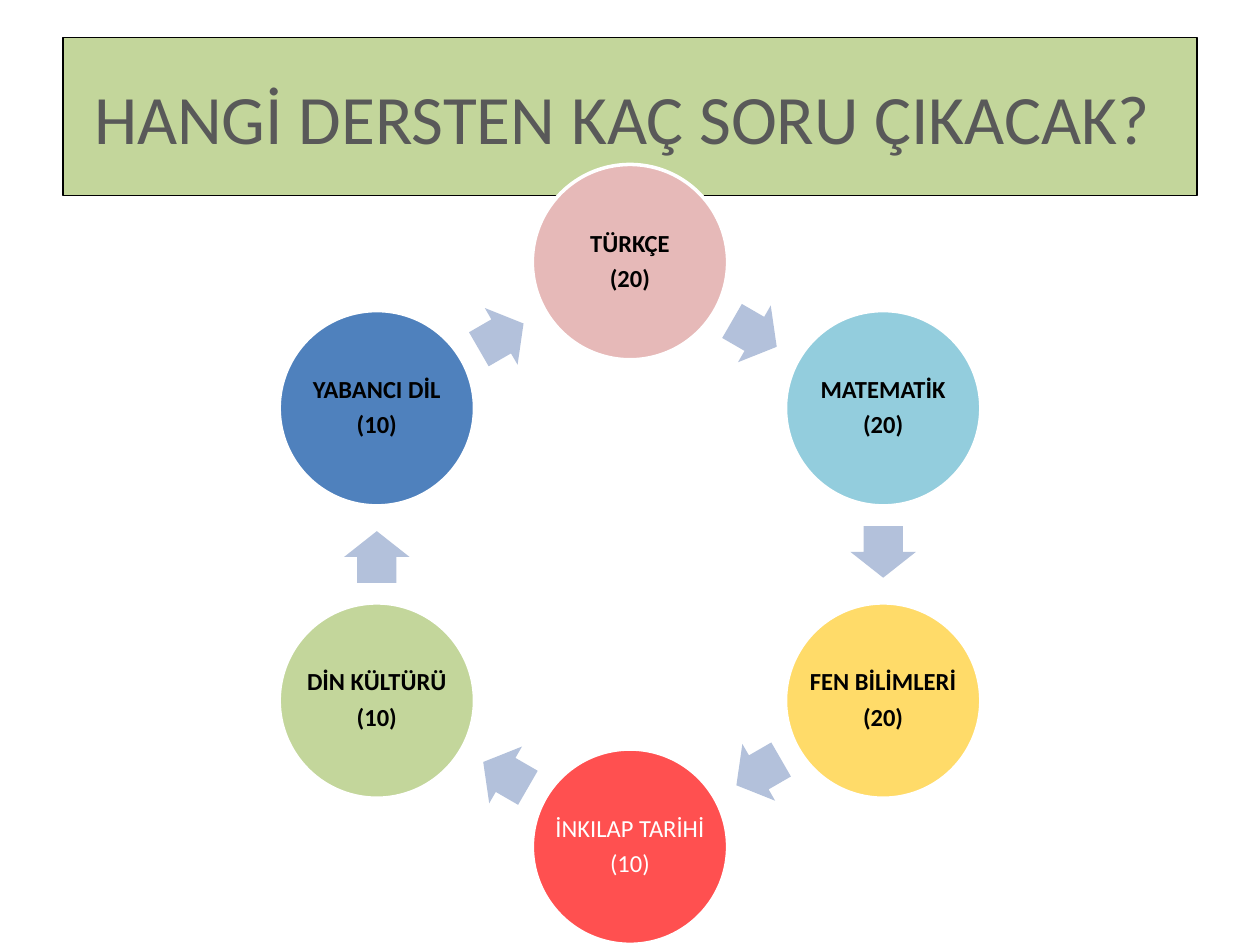
from dataclasses import dataclass
from math import cos, radians, sin

from pptx import Presentation
from pptx.dml.color import RGBColor
from pptx.enum.shapes import MSO_SHAPE
from pptx.enum.text import MSO_ANCHOR, MSO_AUTO_SIZE, PP_ALIGN
from pptx.util import Inches, Pt

ELLIPSE = MSO_SHAPE.OVAL
ARROW = MSO_SHAPE.RIGHT_ARROW
MIDDLE = MSO_ANCHOR.MIDDLE
CENTER = PP_ALIGN.CENTER
NO_AUTOFIT = MSO_AUTO_SIZE.NONE
TITLE_ONLY = 5


@dataclass(frozen=True)
class Theme:
    """Colours, font and type sizes of the slide."""
    font: str = "Calibri"
    title_size: float = 39.6
    label_size: float = 14
    title_text: str = "595959"
    title_fill: str = "C3D69B"
    black: str = "000000"
    white: str = "FFFFFF"
    arrow: str = "B3C1DB"


THEME = Theme()
CENTER_X, CENTER_Y, RADIUS = 5.0, 4.4, 2.32
DIAMETER = 1.55
ARROW_LENGTH, ARROW_WIDTH, ARROW_SETBACK = 0.41, 0.52, 0.02
SUBJECTS = [
    ("TÜRKÇE", 20, "E6B9B8", THEME.black, True),
    ("MATEMATİK", 20, "93CDDD", THEME.black, True),
    ("FEN BİLİMLERİ", 20, "FFDB69", THEME.black, True),
    ("İNKILAP TARİHİ", 10, "FF5050", THEME.white, False),
    ("DİN KÜLTÜRÜ", 10, "C3D69B", THEME.black, True),
    ("YABANCI DİL", 10, "4F81BD", THEME.black, True),
]


def paint(shape, fill, line=None, width=0):
    """Give a shape a solid fill and an optional outline."""
    shape.fill.solid()
    shape.fill.fore_color.rgb = RGBColor.from_string(fill)
    if line is None:
        shape.line.fill.background()
    else:
        shape.line.color.rgb = RGBColor.from_string(line)
        shape.line.width = Pt(width)


def style_text(paragraph, size, color, bold=False):
    """Centre a paragraph and format its runs."""
    paragraph.alignment = CENTER
    for run in paragraph.runs:
        run.font.name = THEME.font
        run.font.size = Pt(size)
        run.font.bold = bold
        run.font.color.rgb = RGBColor.from_string(color)


def add_centered_shape(slide, kind, x, y, width, height):
    """Add a shadowless preset shape around a centre point."""
    shape = slide.shapes.add_shape(
        kind, Inches(x - width / 2), Inches(y - height / 2),
        Inches(width), Inches(height))
    shape.shadow.inherit = False
    return shape


def set_title(slide, text):
    """Fill and format the title placeholder."""
    title = slide.shapes.title
    title.left, title.top = Inches(0.5), Inches(0.3)
    title.width, title.height = Inches(9), Inches(1.25)
    paint(title, THEME.title_fill, THEME.black, 0.75)
    frame = title.text_frame
    frame.text = text
    frame.auto_size = NO_AUTOFIT
    frame.vertical_anchor = MIDDLE
    style_text(frame.paragraphs[0], THEME.title_size, THEME.title_text)


def add_subject(slide, angle, name, count, fill, color, bold):
    """Add a subject circle at an angle on the ring."""
    x = CENTER_X + RADIUS * cos(radians(angle))
    y = CENTER_Y + RADIUS * sin(radians(angle))
    circle = add_centered_shape(slide, ELLIPSE, x, y, DIAMETER, DIAMETER)
    paint(circle, fill, THEME.white, 2)
    frame = circle.text_frame
    frame.text = f"{name}\n({count})"
    frame.word_wrap = False
    frame.vertical_anchor = MIDDLE
    frame.margin_left = frame.margin_right = Inches(0.02)
    frame.margin_top = frame.margin_bottom = Inches(0.02)
    for paragraph in frame.paragraphs:
        paragraph.line_spacing = 0.9
        paragraph.space_after = Pt(0.35 * THEME.label_size)
        style_text(paragraph, THEME.label_size, color, bold)


def add_ring_arrow(slide, angle, step):
    """Add a clockwise arrow midway between two neighbouring circles."""
    distance = RADIUS * cos(radians(step / 2))
    middle = radians(angle + step / 2)
    x = CENTER_X + distance * cos(middle) + ARROW_SETBACK * sin(middle)
    y = CENTER_Y + distance * sin(middle) - ARROW_SETBACK * cos(middle)
    arrow = add_centered_shape(slide, ARROW, x, y, ARROW_LENGTH, ARROW_WIDTH)
    arrow.adjustments[0] = 0.6
    arrow.adjustments[1] = 0.5
    arrow.rotation = (angle + step / 2 + 90) % 360
    paint(arrow, THEME.arrow)


def main():
    """Build the slide and save it."""
    presentation = Presentation()
    presentation.slide_width = Inches(10)
    presentation.slide_height = Inches(7.5)
    slide = presentation.slides.add_slide(presentation.slide_layouts[TITLE_ONLY])
    set_title(slide, "HANGİ DERSTEN KAÇ SORU ÇIKACAK? ")
    step = 360 / len(SUBJECTS)
    for index, subject in enumerate(SUBJECTS):
        angle = index * step - 90
        add_subject(slide, angle, *subject)
        add_ring_arrow(slide, angle, step)
    presentation.save("out.pptx")


if __name__ == "__main__":
    main()
